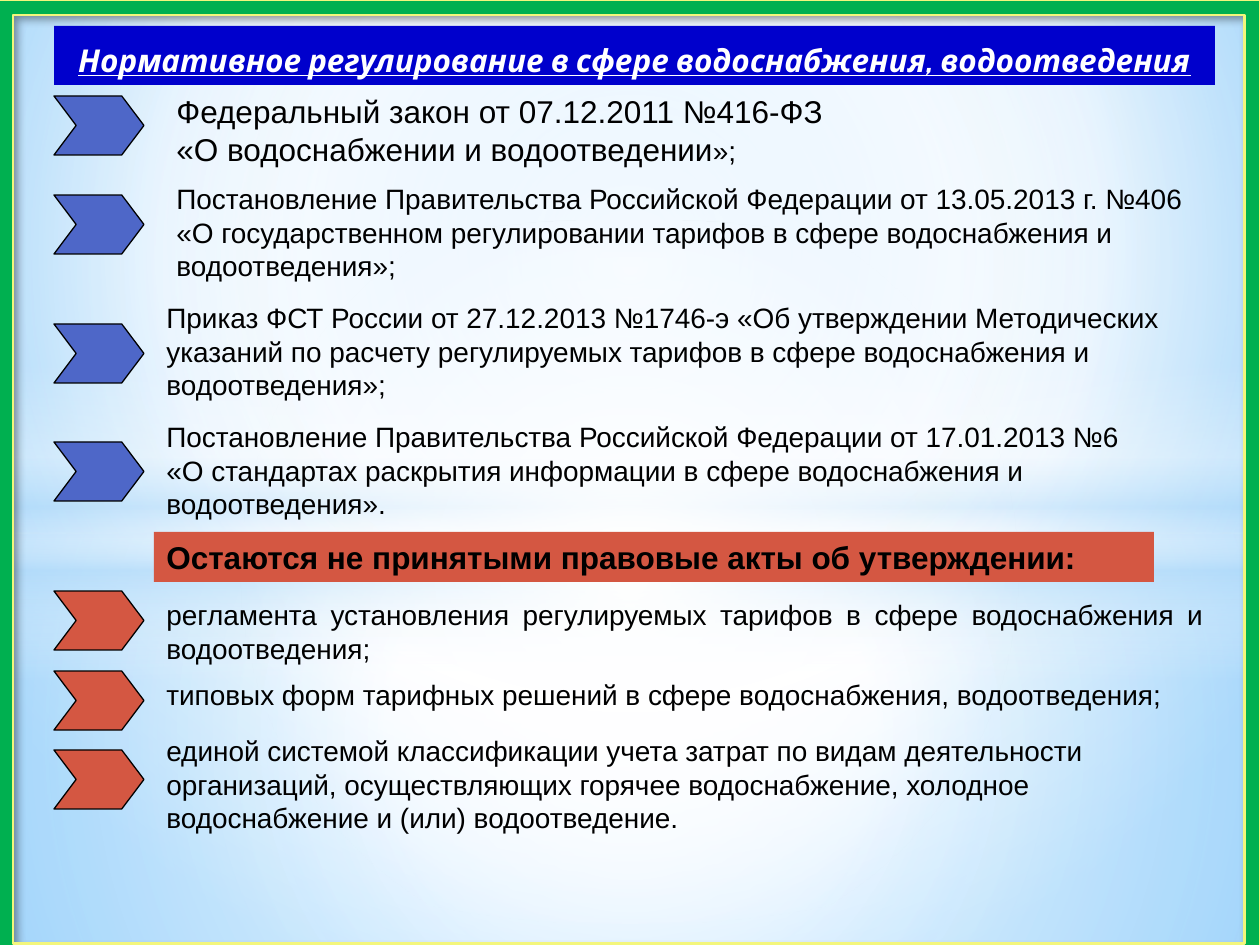
from dataclasses import dataclass

from lxml.etree import SubElement
from pptx import Presentation
from pptx.dml.color import RGBColor
from pptx.enum.shapes import MSO_SHAPE
from pptx.enum.text import MSO_ANCHOR, MSO_AUTO_SIZE, PP_ALIGN
from pptx.oxml.ns import qn
from pptx.util import Emu, Pt

EMU_PER_PX = 914400 / 126


@dataclass(frozen=True)
class Theme:
    frame: str = "00B050"
    frame_line: str = "F3F67C"
    title_fill: str = "0000CC"
    adopted: str = "4E67C8"
    pending: str = "D45742"
    ink: str = "000000"
    light: str = "FFFFFF"
    mist: str = "B4DCFA"
    sky: str = "9ED5FF"
    deep_sky: str = "5BB9FF"
    title_font: str = "Cabin"
    body_font: str = "Arial"
    heading_size: int = 18
    body_size: int = 16


THEME = Theme()
CENTRE = (50, 50, 50, 50)

# Chevron top, text box (left, top, width, height), alignment, paragraphs of (text, size) runs
ADOPTED_ACTS = [
    (96, (164, 86, 1052, 88), PP_ALIGN.LEFT,
     [[("Федеральный закон от 07.12.2011 №416-ФЗ", THEME.heading_size)],
      [("«О водоснабжении и водоотведении", THEME.heading_size), ("»;", THEME.body_size)]]),
    (195, (164, 175, 1062, 114), PP_ALIGN.LEFT,
     "Постановление Правительства Российской Федерации от 13.05.2013 г. №406 "
     "«О государственном регулировании тарифов в сфере водоснабжения и водоотведения»;"),
    (324, (154, 294, 1062, 114), PP_ALIGN.LEFT,
     "Приказ ФСТ России от 27.12.2013 №1746-э «Об утверждении Методических указаний "
     "по расчету регулируемых тарифов в сфере водоснабжения и водоотведения»;"),
    (442, (154, 413, 1022, 114), PP_ALIGN.LEFT,
     "Постановление Правительства Российской Федерации от 17.01.2013 №6 "
     "«О стандартах раскрытия информации в сфере водоснабжения и водоотведения»."),
]
PENDING_ACTS = [
    (591, (154, 591, 1062, 81), PP_ALIGN.JUSTIFY,
     "регламента установления регулируемых тарифов в сфере водоснабжения и водоотведения;"),
    (671, (154, 671, 1042, 47), PP_ALIGN.JUSTIFY,
     "типовых форм тарифных решений в сфере водоснабжения, водоотведения;"),
    (750, (154, 727, 1062, 114), PP_ALIGN.LEFT,
     "единой системой классификации учета затрат по видам деятельности организаций, "
     "осуществляющих горячее водоснабжение, холодное водоснабжение и (или) водоотведение."),
]


def px(*lengths):
    return [Emu(round(length * EMU_PER_PX)) for length in lengths]


def add_color(parent, color, alpha=100):
    node = SubElement(parent, qn("a:srgbClr"), val=color)
    if alpha < 100:
        SubElement(node, qn("a:alpha"), val=str(alpha * 1000))


def set_gradient(fill, owner, stops, centre=None):
    """Radial around centre (left, top, right, bottom %), or top to bottom without one."""
    fill.gradient()
    gradient = owner.find(".//" + qn("a:gradFill"))
    for child in list(gradient):
        gradient.remove(child)
    stop_list = SubElement(gradient, qn("a:gsLst"))
    for position, color, alpha in stops:
        add_color(SubElement(stop_list, qn("a:gs"), pos=str(position * 1000)), color, alpha)
    if centre:
        radial = SubElement(gradient, qn("a:path"), path="circle")
        sides = {side: str(value * 1000) for side, value in zip("ltrb", centre)}
        SubElement(radial, qn("a:fillToRect"), **sides)
    else:
        SubElement(gradient, qn("a:lin"), ang="5400000", scaled="0")


def add_figure(slide, preset, box, fill=None, line=None, width=0.75, adjust=None):
    figure = slide.shapes.add_shape(preset, *px(*box))
    figure.shadow.inherit = False
    if fill:
        figure.fill.solid()
        figure.fill.fore_color.rgb = RGBColor.from_string(fill)
    if line:
        figure.line.color.rgb = RGBColor.from_string(line)
        figure.line.width = Pt(width)
    else:
        figure.line.fill.background()
    if adjust is not None:
        figure.adjustments[0] = adjust
    return figure


def write_text(holder, content, size=THEME.body_size, font=THEME.body_font, color=THEME.ink,
               align=PP_ALIGN.LEFT, anchor=MSO_ANCHOR.MIDDLE, grow=True,
               bold=False, italic=False, underline=False):
    frame = holder.text_frame
    frame.word_wrap = True
    frame.auto_size = MSO_AUTO_SIZE.SHAPE_TO_FIT_TEXT if grow else MSO_AUTO_SIZE.NONE
    frame.vertical_anchor = anchor
    lines = [[(content, size)]] if isinstance(content, str) else content
    for index, runs in enumerate(lines):
        paragraph = frame.add_paragraph() if index else frame.paragraphs[0]
        paragraph.alignment = align
        for words, run_size in runs:
            run = paragraph.add_run()
            run.text = words
            run.font.name, run.font.size = font, Pt(run_size)
            run.font.bold, run.font.italic, run.font.underline = bold, italic, underline
            run.font.color.rgb = RGBColor.from_string(color)


def add_backdrop(slide):
    white, mist = THEME.light, THEME.mist
    set_gradient(slide.background.fill, slide.element,
                 [(0, THEME.sky, 100), (60, white, 100), (100, THEME.deep_sky, 100)],
                 (20, 10, 20, 60))
    layers = [
        (MSO_SHAPE.RECTANGLE, (0, 533, 1260, 412),
         [(0, white, 92), (37, white, 77), (100, mist, 80)], CENTRE),
        (MSO_SHAPE.RECTANGLE, (0, 0, 1260, 533),
         [(0, white, 90), (48, white, 63), (100, mist, 80)], CENTRE),
        (MSO_SHAPE.RECTANGLE, (0, 365, 1260, 315),
         [(0, white, 0), (29, white, 30), (45, mist, 40),
          (55, white, 26), (65, mist, 60), (100, white, 0)], None),
        (MSO_SHAPE.OVAL, (0, 220, 1260, 703), [(0, white, 100), (54, white, 0)], CENTRE),
    ]
    for preset, box, stops, centre in layers:
        layer = add_figure(slide, preset, box)
        set_gradient(layer.fill, layer.element, stops, centre)


def add_border(slide):
    border = add_figure(slide, MSO_SHAPE.FRAME, (-2, 0, 1262, 959), THEME.frame,
                        THEME.frame_line, width=1.25, adjust=0.016)
    effects = border.element.spPr.find(qn("a:effectLst"))
    shadow = SubElement(effects, qn("a:outerShdw"), blurRad=str(Pt(4)), dist=str(Pt(3)),
                        dir="2700000", algn="tl", rotWithShape="0")
    add_color(shadow, THEME.ink, 40)


def add_title(slide):
    title = slide.shapes.title
    slide.shapes.element.append(title.element)  # bring in front of the backdrop
    title.left, title.top, title.width, title.height = px(54, 26, 1161, 59)
    title.fill.solid()
    title.fill.fore_color.rgb = RGBColor.from_string(THEME.title_fill)
    write_text(title, "Нормативное регулирование в сфере водоснабжения, водоотведения",
               size=THEME.heading_size, font=THEME.title_font, color=THEME.light,
               align=PP_ALIGN.CENTER, anchor=MSO_ANCHOR.BOTTOM, grow=False,
               bold=True, italic=True, underline=True)


def add_acts(slide, acts, color):
    for chevron_top, box, align, content in acts:
        add_figure(slide, MSO_SHAPE.CHEVRON, (54, chevron_top, 90, 59), color,
                   THEME.ink, adjust=0.376)
        write_text(slide.shapes.add_textbox(*px(*box)), content, align=align)


def main():
    deck = Presentation()
    deck.slide_width, deck.slide_height = px(1260, 945)
    slide = deck.slides.add_slide(deck.slide_layouts[5])

    # Background and border
    add_backdrop(slide)
    add_border(slide)

    # Title and acts already adopted
    add_title(slide)
    add_acts(slide, ADOPTED_ACTS, THEME.adopted)

    # Acts still to be adopted
    banner = add_figure(slide, MSO_SHAPE.RECTANGLE, (154, 532, 1000, 50), THEME.pending)
    write_text(banner, "Остаются не принятыми правовые акты об утверждении:",
               size=THEME.heading_size, align=PP_ALIGN.JUSTIFY, bold=True)
    add_acts(slide, PENDING_ACTS, THEME.pending)

    deck.save("out.pptx")


if __name__ == "__main__":
    main()
